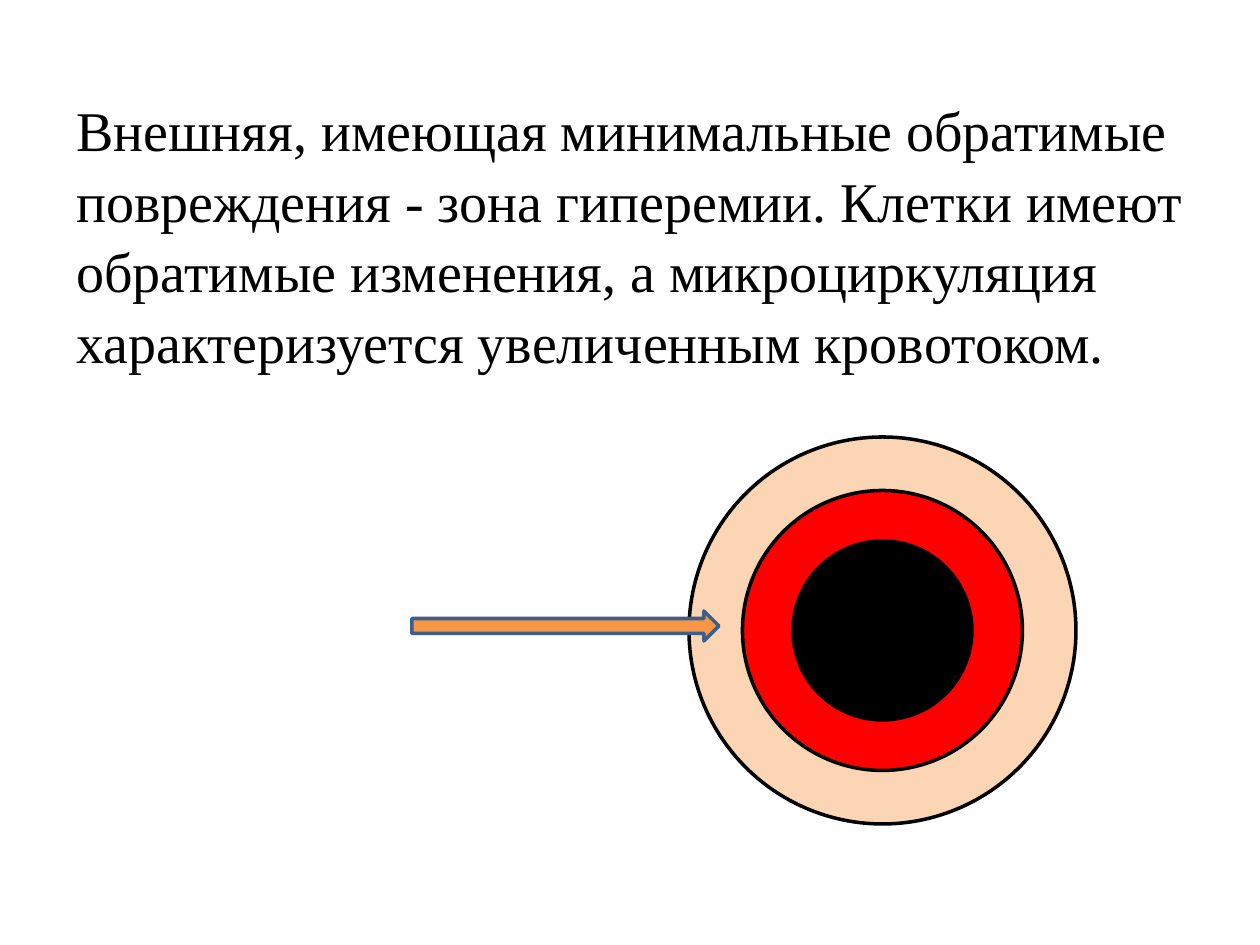
"""Build a slide on the outer zone of a burn, with a target diagram."""
from pptx import Presentation
from pptx import util as u
from pptx.dml.color import RGBColor
from pptx.enum import shapes, text

SCALE = 914400 / 126


def px(length):
    """Turn px into EMU."""
    return u.Emu(round(length * SCALE))


def colour(hex_value):
    """Turn a hex string into a colour."""
    return RGBColor.from_string(hex_value)


def write(frame, content, font="Times New Roman", size=32, fill="000000", spacing=1.05, before=6.4):
    """Write one formatted paragraph into a text frame."""
    paragraph = frame.paragraphs[0]
    paragraph.alignment = text.PP_ALIGN.LEFT
    paragraph.line_spacing = spacing
    paragraph.space_before = u.Pt(before)
    run = paragraph.add_run()
    run.text = content
    run.font.name = font
    run.font.size = u.Pt(size)
    run.font.color.rgb = colour(fill)


def add_figure(parent, kind, box, fill, line):
    """Add a filled, outlined preset shape."""
    figure = parent.add_shape(kind, *map(px, box))
    figure.shadow.inherit = False
    figure.fill.solid()
    figure.fill.fore_color.rgb = colour(fill)
    figure.line.color.rgb = colour(line)
    figure.line.width = u.Pt(2)


def add_description(slide, left, top, width, height):
    """Place the description of the zone."""
    description = slide.shapes.add_textbox(*map(px, (left, top, width, height)))
    description.text_frame.word_wrap = True
    write(
        description.text_frame,
        "Внешняя, имеющая минимальные обратимые повреждения - зона гиперемии. "
        "Клетки имеют обратимые изменения, а микроциркуляция характеризуется "
        "увеличенным кровотоком.",
    )


def add_zones(slide, left, top, size):
    """Place the concentric zones, outermost first."""
    zones = slide.shapes.add_group_shape()
    for diameter, fill in ((size, "FCD5B5"), (280, "FF0000"), (179, "000000")):
        inset = (size - diameter) / 2
        box = (left + inset, top + inset, diameter, diameter)
        add_figure(zones.shapes, shapes.MSO_SHAPE.OVAL, box, fill, "000000")


def add_pointer(slide, left, top, width, height):
    """Place the arrow that points at the outer zone."""
    box = (left, top, width, height)
    add_figure(slide.shapes, shapes.MSO_SHAPE.RIGHT_ARROW, box, "F79646", "3A5F8C")


def main():
    """Build and save the slide."""
    deck = Presentation()
    deck.slide_width, deck.slide_height = px(1260), px(945)
    slide = deck.slides.add_slide(deck.slide_layouts[6])
    add_description(slide, 64, 86, 1134, 624)
    add_zones(slide, 689, 437, 387)
    add_pointer(slide, 412, 611, 307, 30)
    deck.save("out.pptx")


if __name__ == "__main__":
    main()
